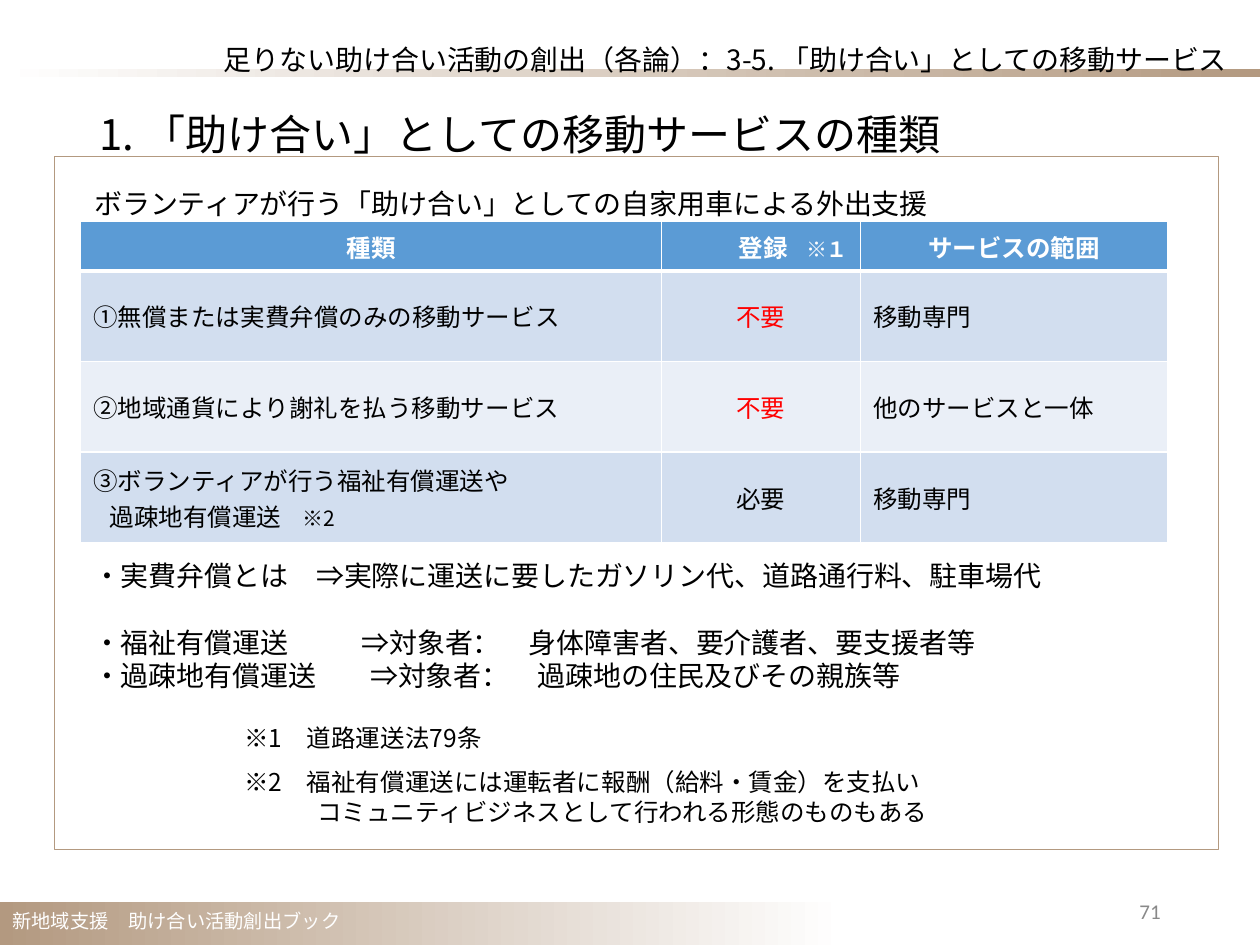
from copy import deepcopy

from lxml import etree
from pptx import Presentation, util as u
from pptx.dml.color import RGBColor
from pptx.enum import shapes, text
from pptx.oxml.ns import qn

JP = "Noto Sans CJK JP"
C = dict(tan="B39980", pale="CCBBAA", white="FFFFFF", black="000000", red="FF0000",
         grey="898989", head="5B9BD5", odd="D2DEEF", even="EAEFF7")
LEFT, CENTER, RIGHT = text.PP_ALIGN.LEFT, text.PP_ALIGN.CENTER, text.PP_ALIGN.RIGHT
TOP, MIDDLE, BOTTOM = text.MSO_ANCHOR.TOP, text.MSO_ANCHOR.MIDDLE, text.MSO_ANCHOR.BOTTOM
LINE = 1.2

BANDS = [
    ((0, 7.16, 10, 0.34), 0, [(0, "tan"), (0.67, "white")]),
    ((0, 0.55, 10, 0.06), 180, [(0, "tan"), (0.33, "pale"), (1, "white")]),
]
FRAME = (0.43, 1.24, 9.24, 5.5)

TABLE_BOX = (0.64, 1.76, 8.63, 2.55)
COLS = [4.61, 1.58, 2.44]
ROWS = [0.39, 0.72, 0.72, 0.72]
HEADER = [
    [[("種類", 14)]],
    [[("登録", 14), ("\u3000", 10.5), ("※１", 12)]],
    [[("サービスの範囲", 14)]],
]
BODY = [
    [[[("①無償または実費弁償のみの移動サービス", 14)]], [[("不要", 14)]], [[("移動専門", 14)]]],
    [[[("②地域通貨により謝礼を払う移動サービス", 14)]], [[("不要", 14)]], [[("他のサービスと一体", 14)]]],
    [[[("③ボランティアが行う福祉有償運送や", 14)], [("過疎地有償運送", 14), ("　※2", 12)]],
     [[("必要", 14)]], [[("移動専門", 14)]]],
]

TEXTS = [
    ((0, 7.17, 2.82, 0.29), [dict(t="新地域支援　助け合い活動創出ブック")],
     dict(size=11, color="white", wrap=False)),
    ((0.69, 0.81, 9, 0.59), [dict(t="1. 「助け合い」としての移動サービスの種類")], dict(size=24)),
    ((7.06, 6.98, 2.25, 0.4), [dict(t="71")],
     dict(size=12, font="Calibri", color="grey", align=RIGHT, anchor=BOTTOM)),
    ((0.64, 4.38, 8.5, 1.18), [
        dict(t="・実費弁償とは　⇒実際に運送に要したガソリン代、道路通行料、駐車場代"),
        dict(t="・福祉有償運送\t⇒対象者：　身体障害者、要介護者、要支援者等", before=19.2, tab=2.13),
        dict(t="・過疎地有償運送\t⇒対象者：　過疎地の住民及びその親族等", tab=2.2),
    ], dict(size=16)),
    ((1.84, 5.69, 7.04, 0.93), [
        dict(t="※1　道路運送法79条"),
        dict(t="※2　福祉有償運送には運転者に報酬（給料・賃金）を支払い", before=8.4),
        dict(t="コミュニティビジネスとして行われる形態のものもある", indent=0.58),
    ], dict(size=14)),
    ((0.53, 0.15, 9.31, 0.64),
     [dict(t="足りない助け合い活動の創出（各論）：3-5. 「助け合い」としての移動サービス")],
     dict(size=16, align=RIGHT, anchor=MIDDLE)),
    ((0.65, 1.43, 8.5, 0.37),
     [dict(t="ボランティアが行う「助け合い」としての自家用車による外出支援")], dict(size=16)),
]


def rgb(name):
    return RGBColor.from_string(C[name])


def inches(box):
    return [u.Inches(v) for v in box]


def add_run(p, t, size=14, font=JP, color="black", bold=False):
    r = p.add_run()
    r.text = t
    r.font.size, r.font.bold, r.font.name = u.Pt(size), bold, font
    r.font.color.rgb = rgb(color)
    etree.SubElement(r.font._element, qn("a:ea"), typeface=font)


def add_text(s, box, lines, size=14, font=JP, color="black", align=LEFT, anchor=TOP, wrap=True):
    tf = s.shapes.add_textbox(*inches(box)).text_frame
    tf.word_wrap, tf.vertical_anchor = wrap, anchor
    for i, line in enumerate(lines):
        p = tf.add_paragraph() if i else tf.paragraphs[0]
        p.alignment, p.line_spacing = align, u.Pt(round(size * LINE, 1))
        if "before" in line:
            p.space_before = u.Pt(line["before"])
        pPr = p._p.get_or_add_pPr()
        if "indent" in line:
            pPr.set("marL", str(u.Inches(line["indent"])))
        if "tab" in line:
            tabs = etree.SubElement(pPr, qn("a:tabLst"))
            etree.SubElement(tabs, qn("a:tab"), pos=str(u.Inches(line["tab"])), algn="l")
        add_run(p, line["t"], size, font, color)


def add_rect(s, box):
    sp = s.shapes.add_shape(shapes.MSO_SHAPE.RECTANGLE, *inches(box))
    sp.shadow.inherit = False
    return sp


def add_band(s, box, angle, stops):
    sp = add_rect(s, box)
    sp.line.fill.background()
    sp.fill.gradient()
    sp.fill.gradient_angle = angle
    lst = sp._element.spPr.find(".//" + qn("a:gsLst"))
    for _ in stops[2:]:
        lst.append(deepcopy(lst[0]))
    for stop, (position, color) in zip(sp.fill.gradient_stops, stops):
        stop.position = position
        stop.color.rgb = rgb(color)


def fill_cell(cell, lines, fill, align, color, bold=False, bottom=1):
    cell.vertical_anchor = MIDDLE
    tcPr = cell._tc.get_or_add_tcPr()
    for side, width in (("lnL", 1), ("lnR", 1), ("lnT", 1), ("lnB", bottom)):
        ln = etree.SubElement(tcPr, qn("a:" + side), w=str(u.Pt(width)))
        solid = etree.SubElement(ln, qn("a:solidFill"))
        etree.SubElement(solid, qn("a:srgbClr"), val=C["white"])
    cell.fill.solid()
    cell.fill.fore_color.rgb = rgb(fill)
    for i, runs in enumerate(lines):
        p = cell.text_frame.add_paragraph() if i else cell.text_frame.paragraphs[0]
        p.alignment = align
        if i:
            p._p.get_or_add_pPr().set("marL", str(u.Inches(0.13)))
        for t, size in runs:
            add_run(p, t, size, color=color, bold=bold)


def add_services(s):
    table = s.shapes.add_table(len(ROWS), len(COLS), *inches(TABLE_BOX)).table
    for col, width in zip(table.columns, COLS):
        col.width = u.Inches(width)
    for row, height in zip(table.rows, ROWS):
        row.height = u.Inches(height)
    for j, (lines, align) in enumerate(zip(HEADER, (CENTER, RIGHT, CENTER))):
        fill_cell(table.cell(0, j), lines, "head", align, "white", bold=True, bottom=3)
    for i, row in enumerate(BODY, 1):
        for j, lines in enumerate(row):
            color = "red" if lines[0][0][0] == "不要" else "black"
            fill_cell(table.cell(i, j), lines, "odd" if i % 2 else "even",
                      CENTER if j == 1 else LEFT, color, bottom=3 if i == 0 else 1)
    for j in range(len(COLS)):
        top = table.cell(1, j)._tc.tcPr.find(qn("a:lnT"))
        top.set("w", str(u.Pt(3)))


def main():
    prs = Presentation()
    prs.slide_width, prs.slide_height = u.Inches(10), u.Inches(7.5)
    s = prs.slides.add_slide(prs.slide_layouts[6])
    for band in BANDS:
        add_band(s, *band)
    add_services(s)
    frame = add_rect(s, FRAME)
    frame.fill.background()
    frame.line.color.rgb, frame.line.width = rgb("tan"), u.Pt(0.25)
    for box, lines, style in TEXTS:
        add_text(s, box, lines, **style)
    prs.save("out.pptx")


if __name__ == "__main__":
    main()
